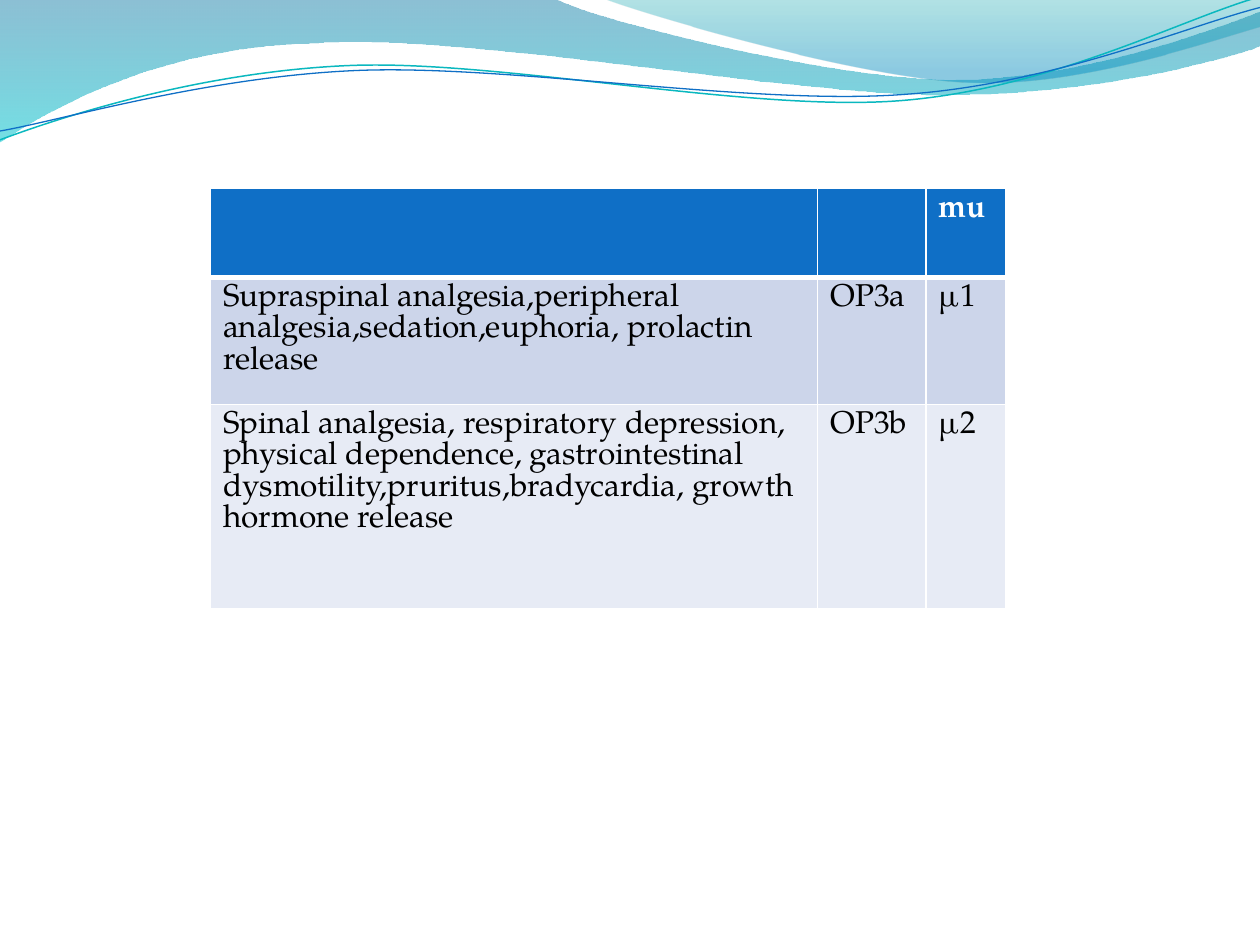
"""Build a slide with a table of mu opioid receptor subtypes under a wave banner."""
from math import cos, radians, sin

from lxml.etree import SubElement
from pptx import Presentation
from pptx.dml.color import RGBColor
from pptx.oxml.ns import qn
from pptx.util import Inches, Pt

THEME = {
    "font": "TeX Gyre Pagella", "size": 18, "leading": 18,
    "white": "FFFFFF", "text": "000000", "header": "0F6FC6",
    "bands": ("CCD5EA", "E7EBF5"), "rule": 1, "header_rule": 3,
    "left_wave": ((0, "0074A1", 45), (1, "00C6CF", 55)),
    "right_wave": ((0, "00A1A9", 30), (0.8, "008BBF", 45)),
    "teal": "0AB8BF", "blue": "0F6FC6",
}
ROWS = [
    ("", "", "mu"),
    ("Supraspinal analgesia,peripheral analgesia,sedation,euphoria, prolactin release",
     "OP3a", "µ1"),
    ("Spinal analgesia, respiratory depression, physical dependence, gastrointestinal "
     "dysmotility,pruritus,bradycardia, growth hormone release", "OP3b", "µ2"),
]
TABLE_ORIGIN = (1.67, 1.49)
COLUMN_WIDTHS = (4.82, 0.86, 0.63)
ROW_HEIGHTS = (0.71, 1.01, 1.62)
WAVES = [
    ("left_wave", [
        (0, 0), (4.4, -0.01),
        (4.76, 0.17, 6.64, 0.63, 7.58, 0.63), (8.53, 0.63, 9.58, 0.26, 10, 0.09),
        (10.01, 0.36),
        (9.83, 0.44, 8.7, 0.76, 7.46, 0.75), (6.22, 0.75, 3.82, 0.28, 2.57, 0.34),
        (1.29, 0.36, 0.46, 0.83, -0.01, 1.13), (0, 0)]),
    ("right_wave", [
        (4.79, -0.01),
        (5.09, 0.11, 6.82, 0.62, 7.69, 0.65), (8.56, 0.69, 9.61, 0.32, 10, 0.21),
        (10, 0), (4.79, -0.01)]),
]
TILT = 357.3
STROKES = [
    ("teal", 0.85, (4.99, 0.58), [
        (0, 1.11),
        (0.48, 0.93, 1.58, 0.57, 2.77, 0.52), (3.95, 0.47, 5.93, 0.89, 7.13, 0.8),
        (8.33, 0.71, 9.38, 0.15, 9.98, -0.02)]),
    ("blue", 0.75, (5, 0.59), [
        (0, 1.04),
        (0.47, 0.96, 1.64, 0.61, 2.83, 0.56), (4.03, 0.51, 5.97, 0.84, 7.17, 0.75),
        (8.36, 0.67, 9.41, 0.21, 10, 0.06)]),
]


def color(value):
    """Return an RGB colour from a hex string."""
    return RGBColor.from_string(value)


def level(segments, center):
    """Return the segments with the tilt about the center taken out."""
    angle = radians(-TILT)
    middle_x, middle_y = center
    leveled = []
    for segment in segments:
        points = []
        for x, y in zip(segment[::2], segment[1::2]):
            across, down = x - middle_x, y - middle_y
            points += [middle_x + across * cos(angle) - down * sin(angle),
                       middle_y + across * sin(angle) + down * cos(angle)]
        leveled.append(tuple(points))
    return leveled


def add_outline(slide, segments, close):
    """Add a freeform of straight (2 numbers) and cubic (6 numbers) segments."""
    points = [(Inches(x), Inches(y)) for segment in segments
              for x, y in zip(segment[::2], segment[1::2])]
    builder = slide.shapes.build_freeform(*points[0])
    builder.add_line_segments(points[1:], close=close)
    shape = builder.convert_to_shape()
    shape.shadow.inherit = False
    lines = iter(list(shape._element.iter(qn("a:lnTo"))))
    for segment in segments[1:]:
        first = next(lines)
        if len(segment) == 6:
            curve = first.makeelement(qn("a:cubicBezTo"), {})
            first.addprevious(curve)
            for line in (first, next(lines), next(lines)):
                curve.append(line[0])
                line.getparent().remove(line)
    return shape


def add_wave(slide, stops, segments):
    """Add a translucent wave with a vertical gradient."""
    shape = add_outline(slide, segments, True)
    shape.line.fill.background()
    shape.fill.gradient()
    shape.fill.gradient_angle = 270
    for stop, (position, value, _) in zip(shape.fill.gradient_stops, stops):
        stop.position = position
        stop.color.rgb = color(value)
    gradient = shape._element.spPr.find(qn("a:gradFill"))
    for element, (_, _, opacity) in zip(gradient.iter(qn("a:srgbClr")), stops):
        SubElement(element, qn("a:alpha"), val=str(opacity * 1000))


def add_stroke(slide, value, width, center, segments):
    """Add an unfilled, tilted curved line."""
    shape = add_outline(slide, level(segments, center), False)
    shape.rotation = TILT
    shape.fill.background()
    shape.line.color.rgb = color(value)
    shape.line.width = Pt(width)


def write_text(frame, text, *, value, bold=False):
    """Write one formatted paragraph into a text frame."""
    paragraph = frame.paragraphs[0]
    paragraph.line_spacing = Pt(THEME["leading"])
    if text:
        run = paragraph.add_run()
        run.text = text
        run.font.name = THEME["font"]
        run.font.size = Pt(THEME["size"])
        run.font.bold = bold
        run.font.color.rgb = color(value)


def set_borders(cell, widths):
    """Give a cell white borders, with widths in points by side."""
    properties = cell._tc.get_or_add_tcPr()
    for index, (side, width) in enumerate(widths.items()):
        line = properties.makeelement(qn(f"a:ln{side}"), {"w": str(Pt(width))})
        fill = SubElement(line, qn("a:solidFill"))
        SubElement(fill, qn("a:srgbClr"), val=THEME["white"])
        properties.insert(index, line)


def add_receptor_table(slide):
    """Add the receptor table with its header and banded rows."""
    left, top = TABLE_ORIGIN
    table = slide.shapes.add_table(
        len(ROWS), len(COLUMN_WIDTHS), Inches(left), Inches(top),
        Inches(sum(COLUMN_WIDTHS)), Inches(sum(ROW_HEIGHTS))).table
    for column, width in zip(table.columns, COLUMN_WIDTHS):
        column.width = Inches(width)
    for index, (row, height, texts) in enumerate(zip(table.rows, ROW_HEIGHTS, ROWS)):
        row.height = Inches(height)
        header = index == 0
        background = THEME["header"] if header else THEME["bands"][(index - 1) % 2]
        widths = dict.fromkeys("LRTB", THEME["rule"])
        if index < 2:
            widths["B" if header else "T"] = THEME["header_rule"]
        for cell, text in zip(row.cells, texts):
            cell.margin_left = cell.margin_right = Inches(0.1)
            cell.margin_top = cell.margin_bottom = Inches(0.05)
            cell.fill.solid()
            cell.fill.fore_color.rgb = color(background)
            set_borders(cell, widths)
            write_text(cell.text_frame, text, bold=header,
                       value=THEME["white" if header else "text"])


def main():
    """Assemble and save the slide."""
    presentation = Presentation()
    presentation.slide_width, presentation.slide_height = Inches(10), Inches(7.5)
    slide = presentation.slides.add_slide(presentation.slide_layouts[6])
    slide.background.fill.solid()
    slide.background.fill.fore_color.rgb = color(THEME["white"])
    for name, segments in WAVES:
        add_wave(slide, THEME[name], segments)
    for name, width, center, segments in STROKES:
        add_stroke(slide, THEME[name], width, center, segments)
    add_receptor_table(slide)
    presentation.save("out.pptx")


if __name__ == "__main__":
    main()
